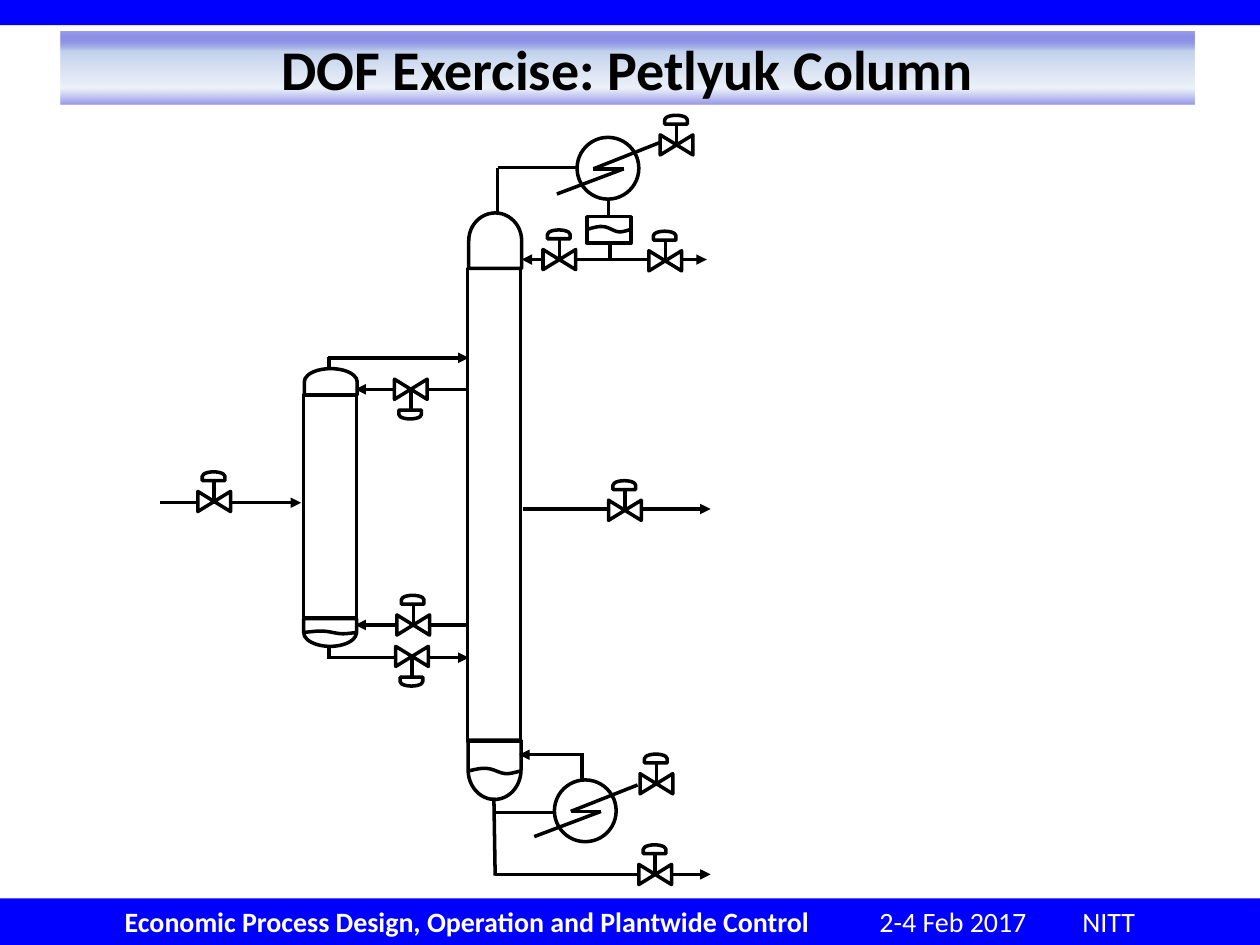
import pptx
import pptx.util
import pptx.oxml
import pptx.oxml.ns
import pptx.dml.color
import pptx.enum.shapes
import pptx.enum.text

Inches = pptx.util.Inches
Pt = pptx.util.Pt
RGB = pptx.dml.color.RGBColor.from_string
qn = pptx.oxml.ns.qn
Kind = pptx.enum.shapes.MSO_SHAPE
Align = pptx.enum.text.PP_ALIGN
Anchor = pptx.enum.text.MSO_ANCHOR
NS = pptx.oxml.ns.nsdecls("a")

hues = {"bar": "0000FF", "ink": "000000", "paper": "FFFFFF",
        "edge": "0000CC", "sky": "C2D1ED", "mist": "D2DDF1"}

deck = pptx.Presentation()
deck.slide_width = Inches(10)
deck.slide_height = Inches(7.5)
slide = deck.slides.add_slide(deck.slide_layouts[5])
shapes = slide.shapes


def draw(kind, x, y, w, h, turn=0, fill=None, line="ink"):
    item = shapes.add_shape(kind, Inches(x), Inches(y), Inches(w), Inches(h))
    item.rotation = turn
    item.shadow.inherit = False
    if fill:
        item.fill.solid()
        item.fill.fore_color.rgb = RGB(hues[fill])
    else:
        item.fill.background()
    if line:
        item.line.color.rgb = RGB(hues[line])
        item.line.width = Pt(2)
    else:
        item.line.fill.background()
    return item


def link(x1, y1, x2, y2, ends=()):
    wire = shapes.add_connector(pptx.enum.shapes.MSO_CONNECTOR.STRAIGHT,
                                Inches(x1), Inches(y1), Inches(x2), Inches(y2))
    wire.line.color.rgb = RGB(hues["ink"])
    wire.line.width = Pt(2)
    props = wire.element.spPr
    for end in ends:
        tip = pptx.oxml.parse_xml(f'<a:{end} {NS} type="triangle"/>')
        props.find(qn("a:ln")).append(tip)
    props.append(pptx.oxml.parse_xml(f"<a:effectLst {NS}/>"))


draw(Kind.RECTANGLE, 0, 0, 10, 0.2, fill="bar", line=None)
footer = draw(Kind.RECTANGLE, 0, 7.13, 10, 0.37, fill="bar", line=None)
frame = footer.text_frame
layout = {"margin_left": Inches(0.99), "margin_right": 0, "margin_top": 0,
          "margin_bottom": 0, "word_wrap": True,
          "vertical_anchor": Anchor.MIDDLE}
for key, value in layout.items():
    setattr(frame, key, value)
para = frame.paragraphs[0]
para.alignment = Align.LEFT
tabs = "".join(f'<a:tab pos="{Inches(x)}" algn="l"/>' for x in (5.99, 7.6))
para._p.get_or_add_pPr().append(
    pptx.oxml.parse_xml(f"<a:tabLst {NS}>{tabs}</a:tabLst>"))
words = [("Economic Process Design, Operation and Plantwide Control", True),
         ("\t2-4 Feb 2017\tNITT", False)]
for text, bold in words:
    run = para.add_run()
    run.text = text
    style = {"name": "Calibri", "size": Pt(16), "bold": bold}
    for key, value in style.items():
        setattr(run.font, key, value)
    run.font.color.rgb = RGB(hues["paper"])

title = shapes.title
place = {"left": 0.48, "top": 0.25, "width": 9, "height": 0.58}
for key, value in place.items():
    setattr(title, key, Inches(value))
title.text_frame.text = "DOF Exercise: Petlyuk Column"
title.text_frame.vertical_anchor = Anchor.MIDDLE
title.text_frame.auto_size = pptx.enum.text.MSO_AUTO_SIZE.NONE
para = title.text_frame.paragraphs[0]
para.alignment = Align.CENTER
style = {"name": "Calibri", "size": Pt(32), "bold": True}
for key, value in style.items():
    setattr(para.runs[0].font, key, value)
para.runs[0].font.color.rgb = RGB(hues["ink"])
title.fill.gradient()
title.fill.gradient_angle = 270
stops = title.element.spPr.find(".//" + qn("a:gsLst"))
for stop in list(stops):
    stops.remove(stop)
for spot, hue, alpha in [(1, "edge", 39), (27, "sky", 100),
                         (78, "mist", 40), (100, "edge", 40)]:
    stops.append(pptx.oxml.parse_xml(
        f'<a:gs {NS} pos="{spot * 1000}"><a:srgbClr val="{hues[hue]}">'
        f'<a:alpha val="{alpha * 1000}"/></a:srgbClr></a:gs>'))

draw(Kind.RECTANGLE, 4.66, 1.72, 0.35, 0.21)
draw(Kind.RECTANGLE, 3.71, 2.13, 0.42, 3.75)
draw(Kind.RECTANGLE, 2.41, 3.13, 0.42, 1.77)
caps = [(3.71, 1.7, 0.44, 270), (3.69, 5.9, 0.47, 90),
        (2.52, 2.82, 0.21, 270), (2.51, 4.81, 0.22, 90)]
for x, y, w, turn in caps:
    draw(Kind.FLOWCHART_DELAY, x, y, w, 0.42, turn)

curve = [[(0, 0), (0.14, -0.5), (0.26, -1.4), (0.38, -1)],
         [(0.38, -1), (0.5, -0.8), (0.6, 0.8), (0.71, 1)],
         [(0.71, 1), (0.8, 1.2), (0.9, 0.5), (1, 0)]]
for x, y, wide, high in [(4.66, 1.82, 0.35, 0.02), (3.71, 6.12, 0.42, 0.02),
                         (2.41, 5.02, 0.42, 0.01)]:
    dots = []
    for part in curve:
        for step in range(1, 9):
            t = step / 8
            rates = ((1 - t) ** 3, 3 * t * (1 - t) ** 2,
                     3 * t ** 2 * (1 - t), t ** 3)
            dx = sum(r * p[0] for r, p in zip(rates, part))
            dy = sum(r * p[1] for r, p in zip(rates, part))
            dots.append((Inches(x + dx * wide), Inches(y + dy * high)))
    pen = shapes.build_freeform(Inches(x), Inches(y))
    pen.add_line_segments(dots, close=False)
    wave = pen.convert_to_shape()
    wave.shadow.inherit = False
    wave.fill.background()
    wave.line.color.rgb = RGB(hues["ink"])
    wave.line.width = Pt(2)

for x, y in [(4.58, 1.09), (4.4, 6.19)]:
    draw(Kind.OVAL, x, y, 0.49, 0.49)
    link(x + 0.66, y + 0.04, x + 0.13, y + 0.25)
    link(x + 0.37, y + 0.25, x + 0.13, y + 0.25)
    link(x + 0.37, y + 0.25, x - 0.16, y + 0.45)

pipes = [(3.95, 1.68, 3.95, 1.33), (3.95, 1.33, 4.58, 1.33),
         (4.83, 1.58, 4.83, 1.71), (4.84, 1.93, 4.84, 2.06),
         (3.92, 6.33, 3.93, 6.95), (3.93, 6.45, 4.4, 6.45),
         (4.62, 5.98, 4.62, 6.19), (2.61, 2.83, 2.61, 2.93),
         (2.61, 5.23, 2.61, 5.13)]
for pipe in pipes:
    link(*pipe)
flows = [(3.93, 6.94, 5.64), (4.61, 5.99, 4.12), (1.27, 3.99, 2.39),
         (2.6, 2.84, 3.72), (2.6, 5.22, 3.72), (3.72, 3.09, 2.82),
         (3.72, 4.96, 2.82), (4.15, 4.04, 5.64)]
for start, y, stop in flows:
    link(start, y, stop, y, ["tailEnd"])
link(4.14, 2.06, 5.61, 2.06, ["headEnd", "tailEnd"])

valves = [(1.7, 3.98, -1), (5.21, 6.22, -1), (3.28, 4.96, -1),
          (5.37, 1.15, -1), (3.27, 5.21, 1), (5.2, 6.94, -1),
          (3.26, 3.09, 1), (4.96, 4.05, -1), (5.28, 2.07, -1),
          (4.44, 2.06, -1)]
for x, y, way in valves:
    turn = 90 if way > 0 else 270
    draw(Kind.FLOWCHART_COLLATE, x - 0.08, y - 0.13, 0.16, 0.26, turn, "paper")
    draw(Kind.FLOWCHART_DELAY, x - 0.04, y + way * 0.2 - 0.09, 0.07, 0.18, turn)
    link(x, y, x, y + way * 0.16)

deck.save("out.pptx")
